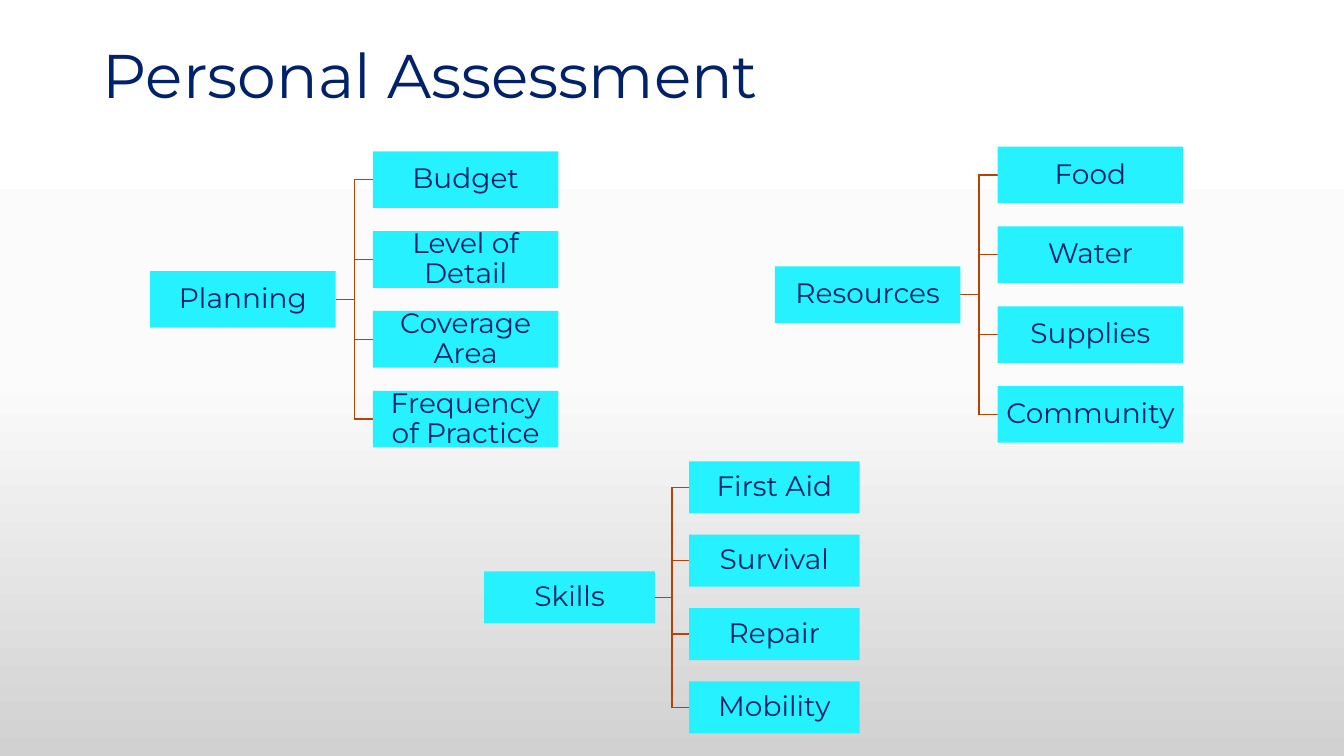
from copy import deepcopy
from dataclasses import dataclass

from lxml import etree
from pptx import Presentation
from pptx.dml import color
from pptx.enum import shapes, text
from pptx.oxml import ns
from pptx.util import Pt

FONT = "Montserrat"
TITLE_ONLY = 5
COLORS = {
    "text": "012169",
    "box": "26F2FF",
    "line": "B64204",
    "top": "FFFFFF",
    "middle": "FBFBFB",
    "bottom": "D1D1D1",
}


@dataclass(frozen=True)
class Tree:
    root: str
    branches: tuple[str, ...]
    left: float
    top: float
    width: float

    @property
    def height(self) -> float:
        return self.width * 0.305

    @property
    def pitch(self) -> float:
        return self.width * 0.43

    @property
    def gap(self) -> float:
        return self.width * 0.2

    @property
    def root_top(self) -> float:
        return self.top + self.pitch * (len(self.branches) - 1) / 2


TREES = (
    Tree(
        "Planning",
        ("Budget", "Level of Detail", "Coverage Area", "Frequency of Practice"),
        107.2, 108.1, 132.6,
    ),
    Tree(
        "Resources",
        ("Food", "Water", "Supplies", "Community"),
        553.5, 104.75, 132.6,
    ),
    Tree(
        "Skills",
        ("First Aid", "Survival", "Repair", "Mobility"),
        345.9, 329.5, 121.9,
    ),
)


def rgb(name: str) -> color.RGBColor:
    return color.RGBColor.from_string(COLORS[name])


def write(frame, words: str, size: float, alignment) -> None:
    paragraph = frame.paragraphs[0]
    paragraph.alignment = alignment
    paragraph.line_spacing = 0.9
    run = paragraph.add_run()
    run.text = words
    run.font.name = FONT
    run.font.size = Pt(size)
    run.font.color.rgb = rgb("text")


def paint_background(slide) -> None:
    fill = slide.background.fill
    fill.gradient()
    fill.gradient_angle = 270
    stop_list = slide.element.xpath(".//a:gsLst")[0]
    stop_list.insert(1, deepcopy(stop_list[0]))
    for stop, name, position in zip(
        fill.gradient_stops, ("top", "middle", "bottom"), (0, 0.5, 1)
    ):
        stop.color.rgb = rgb(name)
        stop.position = position


def add_title(slide, words: str) -> None:
    title = slide.shapes.title
    title.left, title.top = Pt(66), Pt(28.8)
    title.width, title.height = Pt(828), Pt(104.4)
    frame = title.text_frame
    frame.auto_size = text.MSO_AUTO_SIZE.NONE
    frame.vertical_anchor = text.MSO_ANCHOR.TOP
    write(frame, words, 44, text.PP_ALIGN.LEFT)


def add_box(slide, tree: Tree, words: str, left: float, top: float) -> None:
    shape = slide.shapes.add_shape(
        shapes.MSO_SHAPE.RECTANGLE,
        Pt(left), Pt(top), Pt(tree.width), Pt(tree.height),
    )
    shape.shadow.inherit = False
    shape.fill.solid()
    shape.fill.fore_color.rgb = rgb("box")
    shape.line.fill.background()
    frame = shape.text_frame
    frame.word_wrap = True
    frame.vertical_anchor = text.MSO_ANCHOR.MIDDLE
    frame.margin_left = frame.margin_right = Pt(1)
    frame.margin_top = frame.margin_bottom = Pt(1)
    write(frame, words, 20, text.PP_ALIGN.CENTER)


def add_elbow(slide, tree: Tree, branch_top: float) -> None:
    start = tree.left + tree.width
    middle, end = start + tree.gap / 2, start + tree.gap
    root_y = tree.root_top + tree.height / 2
    branch_y = branch_top + tree.height / 2
    builder = slide.shapes.build_freeform(Pt(start), Pt(root_y))
    builder.add_line_segments(
        [
            (Pt(middle), Pt(root_y)),
            (Pt(middle), Pt(branch_y)),
            (Pt(end), Pt(branch_y)),
        ],
        close=False,
    )
    elbow = builder.convert_to_shape()
    elbow.shadow.inherit = False
    elbow.fill.background()
    elbow.line.color.rgb = rgb("line")
    elbow.line.width = Pt(1)
    line = elbow.element.xpath(".//a:ln")[0]
    etree.SubElement(line, ns.qn("a:miter"), lim="800000")


def add_tree(slide, tree: Tree) -> None:
    tops = [tree.top + tree.pitch * row for row in range(len(tree.branches))]
    for top in tops:
        add_elbow(slide, tree, top)
    add_box(slide, tree, tree.root, tree.left, tree.root_top)
    for words, top in zip(tree.branches, tops):
        add_box(slide, tree, words, tree.left + tree.width + tree.gap, top)


def main() -> None:
    presentation = Presentation()
    presentation.slide_width, presentation.slide_height = Pt(960), Pt(540)
    slide = presentation.slides.add_slide(presentation.slide_layouts[TITLE_ONLY])
    paint_background(slide)
    add_title(slide, "Personal Assessment")
    for tree in TREES:
        add_tree(slide, tree)
    presentation.save("out.pptx")


if __name__ == "__main__":
    main()
